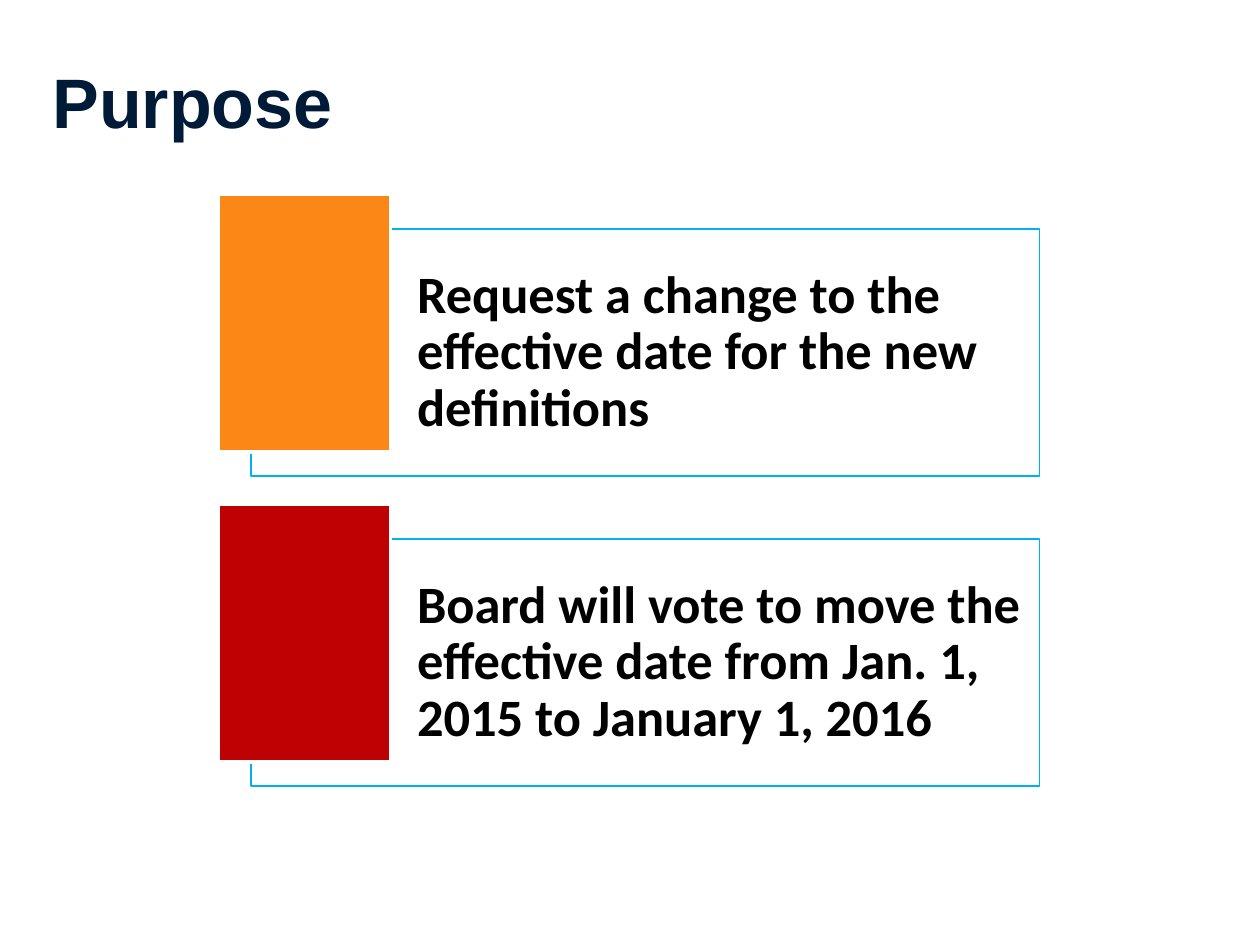
from lxml import etree
from pptx import Presentation
from pptx.dml.color import RGBColor
from pptx.enum import shapes, text
from pptx.oxml import ns
from pptx.util import Inches, Pt

WHITE = RGBColor(0xFF, 0xFF, 0xFF)
BLACK = RGBColor(0x00, 0x00, 0x00)
NAVY = RGBColor(0x00, 0x1B, 0x37)
SKY = RGBColor(0x00, 0xB0, 0xF0)
ORANGE = RGBColor(0xFA, 0x87, 0x16)
RED = RGBColor(0xBE, 0x02, 0x04)


def add_box(s, left, top, width, height, fill, line, line_width):
    sp = s.shapes.add_shape(shapes.MSO_SHAPE.RECTANGLE, Inches(left), Inches(top),
                            Inches(width), Inches(height))
    sp.shadow.inherit = False
    sp.fill.solid()
    sp.fill.fore_color.rgb = fill
    sp.line.color.rgb = line
    sp.line.width = Pt(line_width)
    return sp


def write(tf, words, font, size, color):
    tf.word_wrap = True
    tf.vertical_anchor = text.MSO_ANCHOR.MIDDLE
    p = tf.paragraphs[0]
    p.text = words
    p.alignment = text.PP_ALIGN.LEFT
    r = p.runs[0]
    r.font.name = font
    r.font.size = Pt(size)
    r.font.bold = True
    r.font.color.rgb = color
    return p


prs = Presentation()
prs.slide_width = Inches(10)
prs.slide_height = Inches(7.5)
s = prs.slides.add_slide(prs.slide_layouts[6])

# Title
title = s.shapes.add_textbox(Inches(0.32), Inches(0.17), Inches(9.56), Inches(1.25))
write(title.text_frame, "Purpose", "Arial", 40, NAVY)

# Statement panels, each with a coloured block over its left edge
statements = [
    ("Request a change to the effective date for the new definitions", ORANGE),
    ("Board will vote to move the effective date from Jan. 1, 2015 to January 1, 2016", RED),
]
for i, (words, color) in enumerate(statements):
    top = 1.82 + i * 2.46
    panel = add_box(s, 1.99, top, 6.26, 1.96, WHITE, SKY, 1)
    fill_color = panel.fill._xPr.find(".//" + ns.qn("a:srgbClr"))
    etree.SubElement(fill_color, ns.qn("a:alpha"), val="40000")
    tf = panel.text_frame
    tf.margin_left = Inches(1.32)
    tf.margin_top = tf.margin_right = tf.margin_bottom = Inches(0.12)
    p = write(tf, words, "Calibri", 30, BLACK)
    p.line_spacing = 0.9

    add_box(s, 1.73, top - 0.28, 1.37, 2.05, color, WHITE, 2.25)

prs.save("out.pptx")
